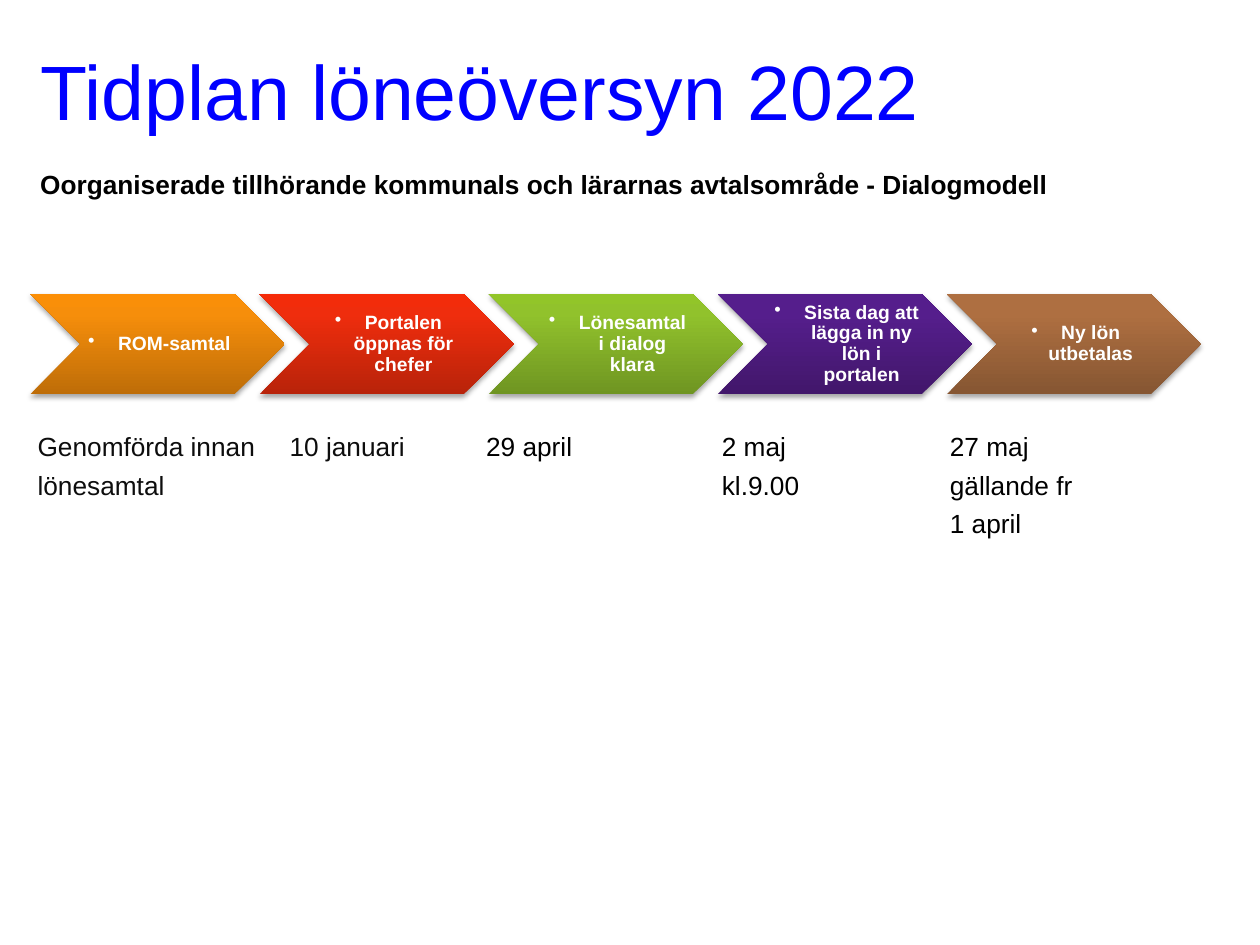
import pptx
import pptx.dml.color
import pptx.enum.shapes
import pptx.enum.text
import pptx.oxml
import pptx.oxml.ns
import pptx.util

Pt = pptx.util.Pt
RGBColor = pptx.dml.color.RGBColor
Align = pptx.enum.text.PP_ALIGN
Anchor = pptx.enum.text.MSO_ANCHOR

BLUE = RGBColor(0x00, 0x00, 0xFF)
BLACK = RGBColor(0x00, 0x00, 0x00)
NEAR_BLACK = RGBColor(0x0D, 0x0D, 0x0D)
WHITE = RGBColor(0xFF, 0xFF, 0xFF)

# Content
TITLE = "Tidplan löneöversyn 2022"
SUBTITLE = "Oorganiserade tillhörande kommunals och lärarnas avtalsområde - Dialogmodell"

# Step label and its gradient from bottom to top
STEPS = [
    ("ROM-samtal", ("BE6D08", "F68E0B", "FC8F06")),
    ("Portalen öppnas för chefer", ("B8230A", "EF2D0D", "F52A08")),
    ("Lönesamtal i dialog klara", ("6F9522", "91C22C", "92C529")),
    ("Sista dag att lägga in ny lön i portalen", ("42176B", "551E8C", "561C8E")),
    ("Ny lön utbetalas", ("865632", "AE6F41", "B1703F")),
]

# Lines, left, width, colour, wrap
DATES = [
    (["Genomförda innan", "lönesamtal"], 14.4, 144.7, NEAR_BLACK, False),
    (["10 januari"], 158.4, 81.4, NEAR_BLACK, False),
    (["29 april"], 270.7, 64, BLACK, False),
    (["2 maj", "kl.9.00"], 405.4, 61.2, BLACK, False),
    (["27 maj", "gällande fr", "1 april"], 535.7, 95, BLACK, True),
]

# Layout
STEP_LEFT, STEP_TOP, STEP_PITCH = 17.3, 167.8, 130.9
STEP_WIDTH, STEP_HEIGHT = 145.4, 57.6
LABEL_INSET, LABEL_WIDTH, LABEL_INDENT = 28.8, 87.8, 17.1
DATE_TOP, DATE_LINE, DATE_GAP = 242.6, 17.2, 3.9
STOP_POSITIONS = (0, 80, 100)
NAMESPACE = pptx.oxml.ns.nsdecls("a")


def write(para, text, *, size, color, bold=False, align=Align.LEFT,
          before=0, spacing=1.0, bullet_indent=None):
    """Put one formatted run of text in a paragraph."""
    para.alignment = align
    para.line_spacing = spacing
    para.space_before = Pt(before)
    if bullet_indent:
        properties = para._p.get_or_add_pPr()
        properties.set("marL", str(Pt(bullet_indent)))
        properties.set("indent", str(-Pt(bullet_indent)))
        properties.append(pptx.oxml.parse_xml(f'<a:buChar {NAMESPACE} char="•"/>'))
    span = para.add_run()
    span.text = text
    span.font.name = "Arial"
    span.font.size = Pt(size)
    span.font.bold = bold
    span.font.color.rgb = color


def style_chevron(shape, colors):
    """Give a chevron its vertical gradient and soft shadow."""
    stops = "".join(
        f'<a:gs pos="{position * 1000}"><a:srgbClr val="{color}"/></a:gs>'
        for position, color in zip(STOP_POSITIONS, colors))
    properties = shape._element.spPr
    properties.append(pptx.oxml.parse_xml(
        f'<a:gradFill {NAMESPACE} rotWithShape="1"><a:gsLst>{stops}</a:gsLst>'
        '<a:lin ang="16200000" scaled="0"/></a:gradFill>'))
    shape.line.fill.background()
    properties.append(pptx.oxml.parse_xml(
        f'<a:effectLst {NAMESPACE}><a:outerShdw blurRad="{Pt(3.1)}" dist="{Pt(1.8)}" '
        'dir="5400000" rotWithShape="0"><a:srgbClr val="000000">'
        '<a:alpha val="35000"/></a:srgbClr></a:outerShdw></a:effectLst>'))


deck = pptx.Presentation()
deck.slide_width, deck.slide_height = Pt(720), Pt(540)
page = deck.slides.add_slide(deck.slide_layouts[5])

# Title with its subtitle
title = page.shapes.title
title.left, title.top, title.width, title.height = Pt(15.8), Pt(20.9), Pt(644.4), Pt(97.2)
frame = title.text_frame
frame.auto_size = pptx.enum.text.MSO_AUTO_SIZE.NONE
frame.word_wrap = True
frame.vertical_anchor = Anchor.MIDDLE
write(frame.paragraphs[0], TITLE, size=44, color=BLUE)
write(frame.add_paragraph(), SUBTITLE, size=15, color=BLACK, bold=True, before=18)

# Chevrons with their labels
for index, (label, colors) in enumerate(STEPS):
    left = STEP_LEFT + index * STEP_PITCH
    chevron = page.shapes.add_shape(
        pptx.enum.shapes.MSO_SHAPE.CHEVRON,
        Pt(left), Pt(STEP_TOP), Pt(STEP_WIDTH), Pt(STEP_HEIGHT))
    style_chevron(chevron, colors)
    box = page.shapes.add_textbox(
        Pt(left + LABEL_INSET), Pt(STEP_TOP), Pt(LABEL_WIDTH), Pt(STEP_HEIGHT))
    frame = box.text_frame
    frame.word_wrap = True
    frame.vertical_anchor = Anchor.MIDDLE
    frame.margin_left = Pt(3.6)
    frame.margin_top = frame.margin_right = frame.margin_bottom = Pt(1.4)
    write(frame.paragraphs[0], label, size=11, color=WHITE, bold=True,
          align=Align.CENTER, spacing=0.9, bullet_indent=LABEL_INDENT)

# Dates below the chevrons
for lines, left, width, color, wrap in DATES:
    height = 7.2 + len(lines) * (DATE_LINE + DATE_GAP) - DATE_GAP
    box = page.shapes.add_textbox(Pt(left), Pt(DATE_TOP), Pt(width), Pt(height))
    frame = box.text_frame
    frame.word_wrap = wrap
    for number, line in enumerate(lines):
        para = frame.add_paragraph() if number else frame.paragraphs[0]
        write(para, line, size=15, color=color, before=DATE_GAP if number else 0)

deck.save("out.pptx")
